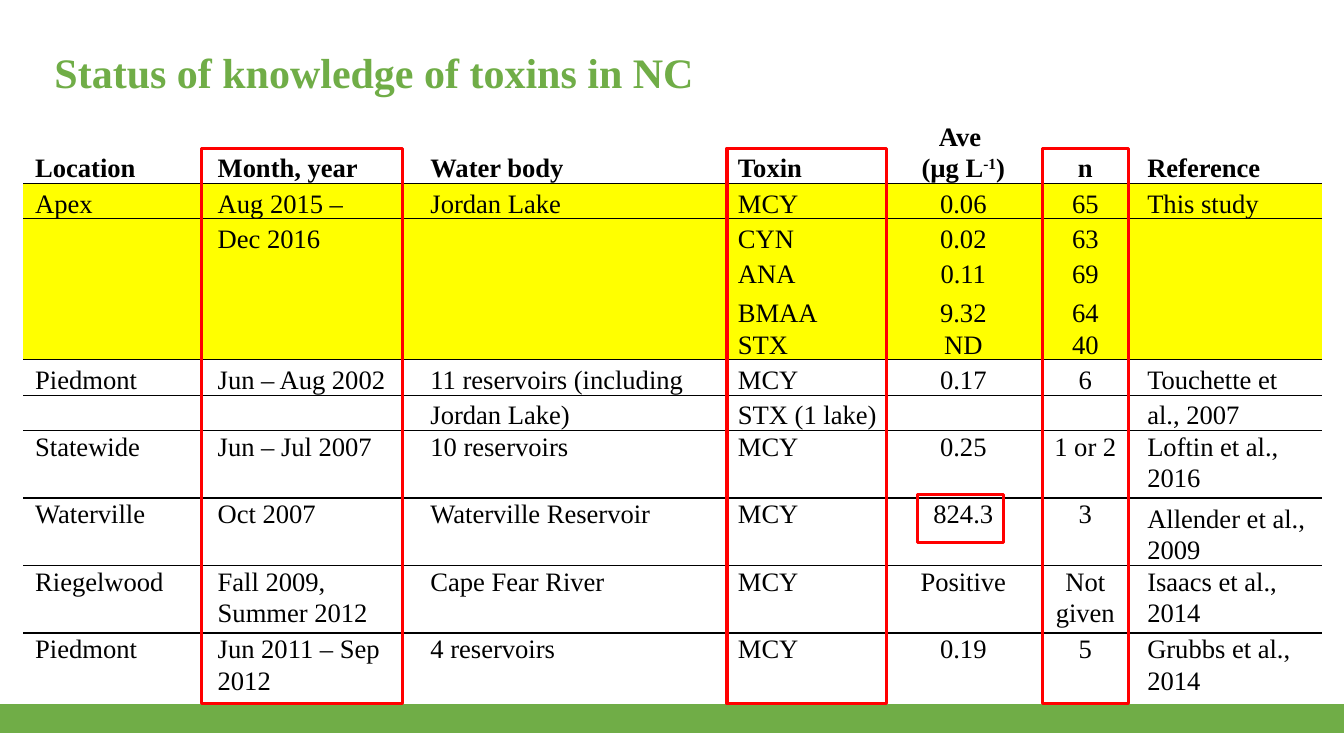
from lxml import etree
from pptx import Presentation
from pptx.dml.color import RGBColor
from pptx.enum import shapes, text
from pptx.oxml.ns import qn
from pptx.util import Inches, Pt

FONT = "Times New Roman"
BLACK, GREEN, RED, YELLOW = "000000", "70AD47", "FF0000", "FFFF00"
NO_STYLE_NO_GRID = "{2D5ABB26-0587-4C30-8999-92F81FD0307C}"

TITLE = "Status of knowledge of toxins in NC"
# "^" marks the start and end of a superscript
ROWS = [
    ("Location", "Month, year", "Water body", "Toxin", "Ave \n(µg L^-1^)", "n", "Reference"),
    ("Apex", "Aug 2015 –", "Jordan Lake", "MCY", "0.06", "65", "This study"),
    ("", "Dec 2016", "", "CYN", "0.02", "63", ""),
    ("", "", "", "ANA", "0.11", "69", ""),
    ("", "", "", "BMAA\nSTX", "9.32\nND", "64\n40", ""),
    ("Piedmont", "Jun – Aug 2002", "11 reservoirs (including", "MCY", "0.17", "6", "Touchette et"),
    ("", "", "Jordan Lake)", "STX (1 lake)", "", "", "al., 2007"),
    ("Statewide", "Jun – Jul 2007", "10 reservoirs", "MCY", "0.25", "1 or 2", "Loftin et al., 2016"),
    ("Waterville", "Oct 2007", "Waterville Reservoir", "MCY", "824.3", "3", "Allender et al., 2009"),
    ("Riegelwood", "Fall 2009, Summer 2012", "Cape Fear River", "MCY", "Positive", "Not given",
     "Isaacs et al., 2014"),
    ("Piedmont", "Jun 2011 – Sep 2012", "4 reservoirs", "MCY", "0.19", "5", "Grubbs et al., 2014"),
]
COLUMN_WIDTHS = [1.81, 2.11, 3.05, 1.64, 1.43, 0.99, 1.85]
ROW_HEIGHTS = [0.75, 0.35, 0.35, 0.35, 0.7, 0.35, 0.35] + [0.67] * 4
CENTERED_COLUMNS = (4, 5)
THIS_STUDY_ROWS = range(1, 5)
UNRULED_ROWS = (2, 3, len(ROWS) - 1)
FIRST_TOP_ROW = 7
BOTTOM_CELLS = {(8, 6)}

HIGHLIGHTS = [  # left, top, width, height
    (2.0, 1.47, 1.99, 5.51),
    (7.21, 1.47, 1.58, 5.51),
    (10.34, 1.47, 0.85, 5.51),
    (9.1, 4.91, 0.85, 0.47),
]


def color(value):
    return RGBColor.from_string(value)


def format_run(run, size, value, bold):
    run.font.name = FONT
    run.font.size = Pt(size)
    run.font.bold = bold
    run.font.color.rgb = color(value)


def add_rectangle(slide, box, line, width, fill=None):
    shape = slide.shapes.add_shape(shapes.MSO_SHAPE.RECTANGLE, *map(Inches, box))
    shape.shadow.inherit = False
    shape.line.color.rgb = color(line)
    shape.line.width = Pt(width)
    if fill:
        shape.fill.solid()
        shape.fill.fore_color.rgb = color(fill)
    else:
        shape.fill.background()


def rule_below(cell):
    """Draw a thin black border on the bottom side of a cell."""
    properties = cell._tc.get_or_add_tcPr()
    border = etree.Element(qn("a:lnB"), w=str(Pt(1)))
    fill = etree.SubElement(border, qn("a:solidFill"))
    etree.SubElement(fill, qn("a:srgbClr"), val=BLACK)
    properties.insert(0, border)


def fill_cell(cell, row, column):
    cell.margin_left = cell.margin_right = Inches(0.12)
    cell.margin_top = cell.margin_bottom = 0
    at_bottom = row < FIRST_TOP_ROW or (row, column) in BOTTOM_CELLS
    cell.vertical_anchor = text.MSO_ANCHOR.BOTTOM if at_bottom else text.MSO_ANCHOR.TOP
    if row in THIS_STUDY_ROWS:
        cell.fill.solid()
        cell.fill.fore_color.rgb = color(YELLOW)
    else:
        cell.fill.background()
    if row not in UNRULED_ROWS:
        rule_below(cell)

    frame = cell.text_frame
    for index, line in enumerate(ROWS[row][column].split("\n")):
        paragraph = frame.add_paragraph() if index else frame.paragraphs[0]
        paragraph.line_spacing = 1.07
        if column in CENTERED_COLUMNS:
            paragraph.alignment = text.PP_ALIGN.CENTER
        for part, words in enumerate(line.split("^")):
            if words:
                run = paragraph.add_run()
                run.text = words
                format_run(run, 19, BLACK, row == 0)
                if part % 2:
                    run._r.get_or_add_rPr().set("baseline", "30000")


def add_toxin_table(slide):
    frame = slide.shapes.add_table(
        len(ROWS), len(COLUMN_WIDTHS), Inches(0.23), Inches(1.07),
        Inches(sum(COLUMN_WIDTHS)), Inches(sum(ROW_HEIGHTS)))
    table = frame.table
    table.first_row = table.horz_banding = False
    table._tbl.tblPr.find(qn("a:tableStyleId")).text = NO_STYLE_NO_GRID
    for column, width in zip(table.columns, COLUMN_WIDTHS):
        column.width = Inches(width)
    for row, height in enumerate(ROW_HEIGHTS):
        table.rows[row].height = Inches(height)
        for column in range(len(COLUMN_WIDTHS)):
            fill_cell(table.cell(row, column), row, column)


def main():
    presentation = Presentation()
    presentation.slide_width, presentation.slide_height = Inches(13.33), Inches(7.5)
    slide = presentation.slides.add_slide(presentation.slide_layouts[5])

    add_toxin_table(slide)
    add_rectangle(slide, (0, 6.99, 13.33, 0.28), GREEN, 1, GREEN)

    title = slide.shapes.title
    title.left, title.top, title.width, title.height = map(Inches, (0.44, 0.02, 11.5, 1.45))
    title.text_frame.text = TITLE
    title.text_frame.vertical_anchor = text.MSO_ANCHOR.MIDDLE
    paragraph = title.text_frame.paragraphs[0]
    paragraph.alignment = text.PP_ALIGN.LEFT
    paragraph.line_spacing = 0.9
    format_run(paragraph.runs[0], 30, GREEN, True)

    for box in HIGHLIGHTS:
        add_rectangle(slide, box, RED, 2.25)
    presentation.save("out.pptx")


if __name__ == "__main__":
    main()
